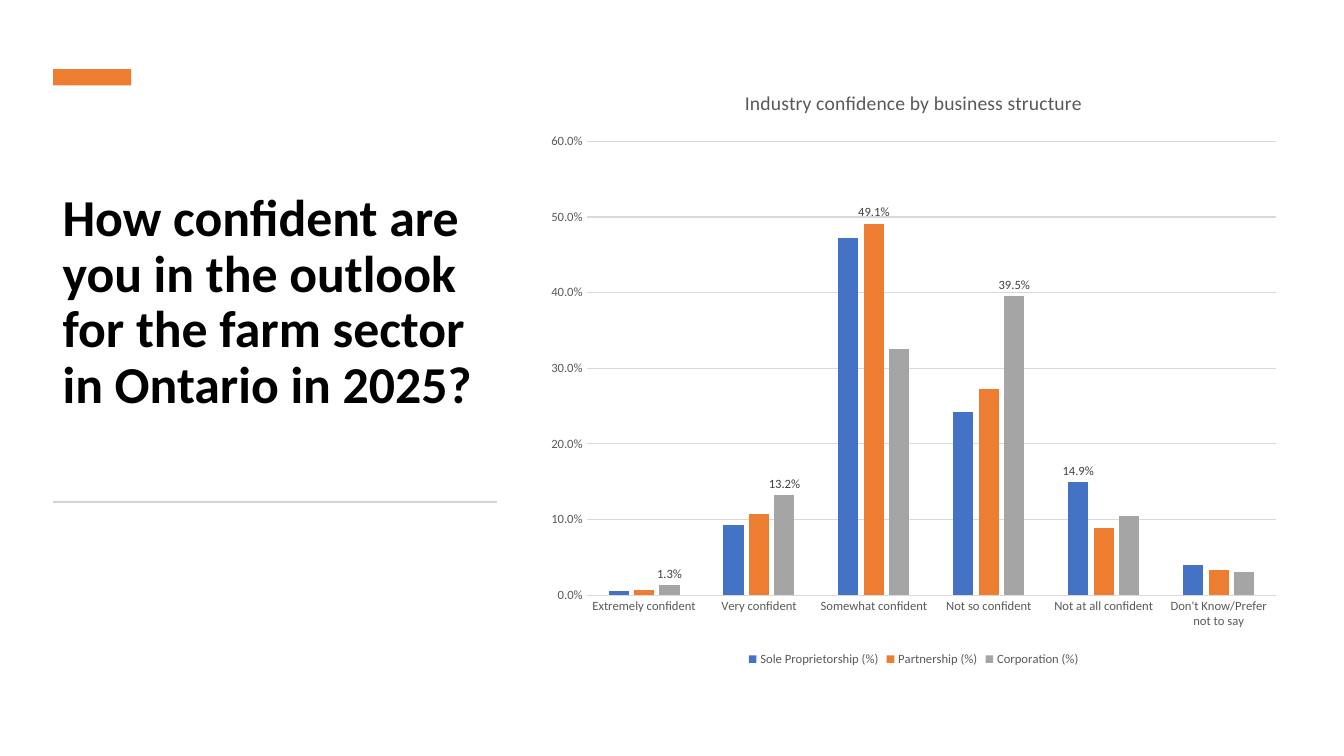
from pptx import Presentation
from pptx.chart.data import CategoryChartData
from pptx.dml.color import RGBColor
from pptx.enum.chart import XL_CHART_TYPE, XL_LABEL_POSITION, XL_LEGEND_POSITION, XL_TICK_MARK
from pptx.enum.shapes import MSO_SHAPE
from pptx.enum.text import MSO_ANCHOR, MSO_AUTO_SIZE, PP_ALIGN
from pptx.util import Pt

# Content
QUESTION = "How confident are you in the outlook for the farm sector in Ontario in 2025?"
CHART_TITLE = "Industry confidence by business structure"
ANSWERS = ["Extremely confident", "Very confident", "Somewhat confident",
           "Not so confident", "Not at all confident", "Don't Know/Prefer not to say"]
# Name, colour, share per answer, indexes of the labelled answers
STRUCTURES = [
    ("Sole Proprietorship (%)", "4472C4", [0.005, 0.093, 0.472, 0.242, 0.149, 0.04], [4]),
    ("Partnership (%)", "ED7D31", [0.007, 0.107, 0.491, 0.273, 0.089, 0.033], [2]),
    ("Corporation (%)", "A5A5A5", [0.013, 0.132, 0.326, 0.395, 0.105, 0.03], [0, 1, 3]),
]
# Left, top, width, height in points
QUESTION_BOX = (37.5, 88.5, 317, 252)
BARS = [((38, 49.3, 55.7, 11.7), "ED7D31"), ((38, 357.8, 317, 1.4), "D5D5D5")]
CHART_BOX = (383, 49, 539.3, 430)
FONT = "Calibri"
GREY, GRID = "595959", "D9D9D9"


def color(hex_code):
    return RGBColor.from_string(hex_code)


def points(box):
    return [Pt(length) for length in box]


def style(font, size, hex_code, bold=False):
    font.name, font.size, font.bold = FONT, Pt(size), bold
    font.color.rgb = color(hex_code)


def outline(line):
    line.color.rgb = color(GRID)
    line.width = Pt(0.75)


deck = Presentation()
deck.slide_width, deck.slide_height = Pt(960), Pt(540)
slide = deck.slides.add_slide(deck.slide_layouts[5])

# Question
question = slide.shapes.title
question.left, question.top, question.width, question.height = points(QUESTION_BOX)
frame = question.text_frame
frame.word_wrap = True
frame.auto_size = MSO_AUTO_SIZE.NONE
frame.vertical_anchor = MSO_ANCHOR.BOTTOM
frame.margin_bottom = Pt(44)
paragraph = frame.paragraphs[0]
paragraph.alignment = PP_ALIGN.LEFT
paragraph.line_spacing = 0.9
run = paragraph.add_run()
run.text = QUESTION
style(run.font, 37, "000000", bold=True)

# Accent bar and divider
for box, fill in BARS:
    bar = slide.shapes.add_shape(MSO_SHAPE.RECTANGLE, *points(box))
    bar.shadow.inherit = False
    bar.fill.solid()
    bar.fill.fore_color.rgb = color(fill)
    bar.line.fill.background()

# Confidence chart
confidence = CategoryChartData(number_format="0.0%")
confidence.categories = ANSWERS
for name, _, shares, _ in STRUCTURES:
    confidence.add_series(name, shares)
chart = slide.shapes.add_chart(
    XL_CHART_TYPE.COLUMN_CLUSTERED, *points(CHART_BOX), confidence).chart
style(chart.font, 10, "000000")
chart.has_title = True
heading = chart.chart_title.text_frame.paragraphs[0].add_run()
heading.text = CHART_TITLE
style(heading.font, 14, GREY)
chart.chart_title.include_in_layout = False

# Axes and legend
chart.has_legend = True
chart.legend.position = XL_LEGEND_POSITION.BOTTOM
chart.legend.include_in_layout = False
style(chart.legend.font, 9, GREY)
answer_axis, share_axis = chart.category_axis, chart.value_axis
for axis in (answer_axis, share_axis):
    axis.major_tick_mark = axis.minor_tick_mark = XL_TICK_MARK.NONE
    style(axis.tick_labels.font, 9, GREY)
outline(answer_axis.format.line)
share_axis.format.line.fill.background()
share_axis.has_major_gridlines = True
outline(share_axis.major_gridlines.format.line)
share_axis.minimum_scale, share_axis.maximum_scale, share_axis.major_unit = 0, 0.6, 0.1
share_axis.tick_labels.number_format = "0.0%"
share_axis.tick_labels.number_format_is_linked = False

# Columns, with a label on the highest share of an answer
plot = chart.plots[0]
plot.vary_by_categories = False
plot.gap_width, plot.overlap = 219, -27
for columns, (_, fill, _, labelled) in zip(plot.series, STRUCTURES):
    columns.format.fill.solid()
    columns.format.fill.fore_color.rgb = color(fill)
    columns.data_labels.show_value = False
    for index in labelled:
        label = columns.points[index].data_label
        label.position = XL_LABEL_POSITION.OUTSIDE_END
        style(label.font, 9, "404040")

deck.save("out.pptx")
